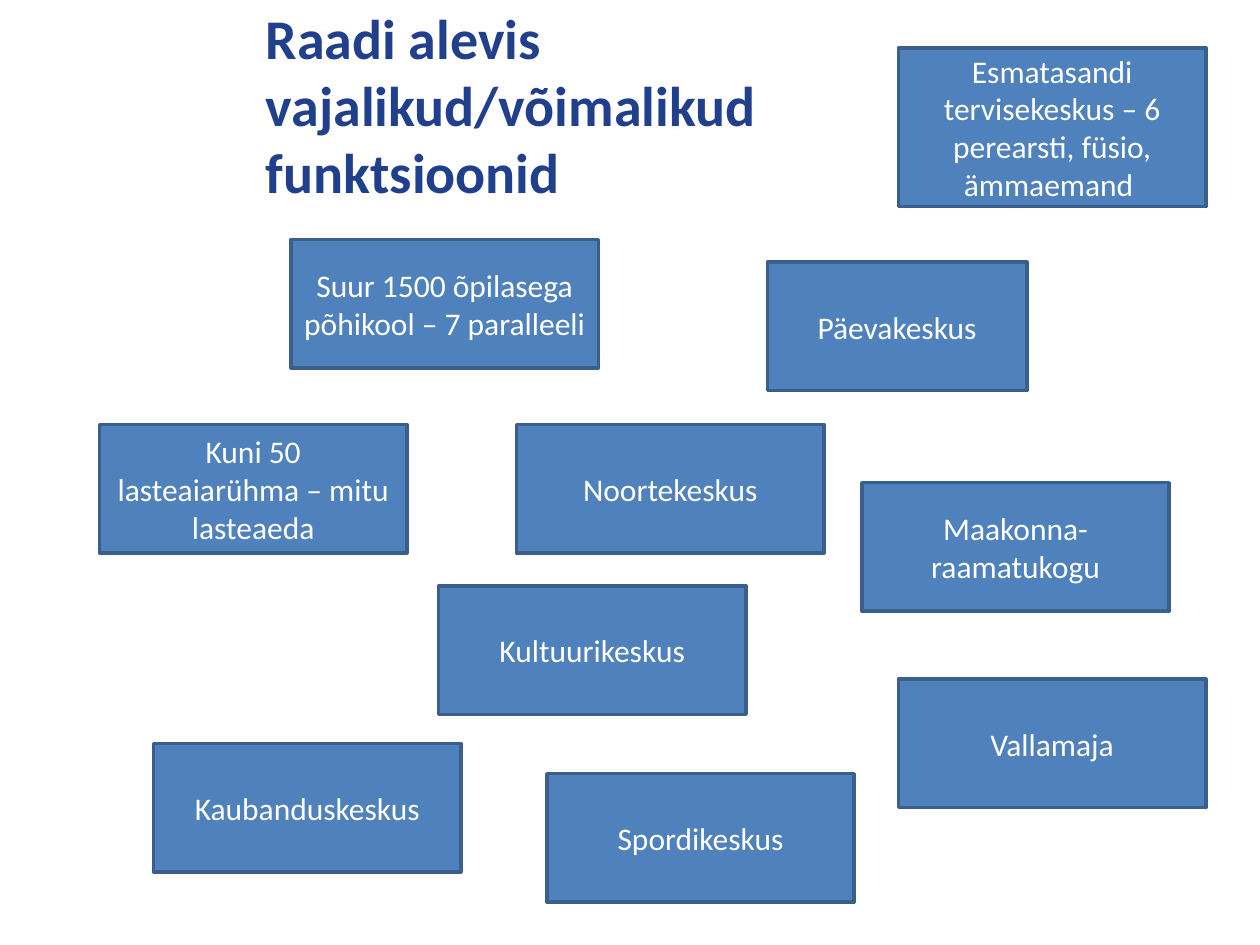
from pptx import Presentation
from pptx.dml.color import RGBColor
from pptx.enum.shapes import MSO_SHAPE as Shape
from pptx.enum.text import MSO_ANCHOR as Anchor, MSO_AUTO_SIZE as AutoSize, PP_ALIGN as Align
from pptx.util import Pt

BOX_WIDTH = 175.7
BOX_HEIGHT = 73.4
RIGHT_COLUMN = 513.4
MIDDLE_ROW = 242.6

FACILITIES = [
    ("Esmatasandi tervisekeskus – 6 perearsti, füsio, ämmaemand ", RIGHT_COLUMN, 27.4, BOX_WIDTH, 90.7),
    ("Suur 1500 õpilasega põhikool – 7 paralleeli", 166.3, 136.8),
    ("Kuni 50 lasteaiarühma – mitu lasteaeda", 56.9, MIDDLE_ROW),
    ("Kultuurikeskus", 250.6, 334.8),
    ("Noortekeskus", 295.2, MIDDLE_ROW),
    ("Päevakeskus", 438.5, 149.8, 148.3),
    ("Spordikeskus", 312.5, 442.1),
    ("Kaubanduskeskus", 87.8, 424.8),
    ("Vallamaja", RIGHT_COLUMN, 388.1),
    ("Maakonna-raamatukogu", 492.5, 275.8),
]


def color(value):
    return RGBColor.from_string(value)


class SlideBuilder:
    font_name = "Calibri"
    title_color = "203F8C"
    fill_color = "4F81BD"
    line_color = "3A5F8C"
    text_color = "FFFFFF"

    def __init__(self, slide):
        self.slide = slide

    def add_text(self, shape, text, size, text_color, alignment, bold=False):
        frame = shape.text_frame
        frame.word_wrap = True
        frame.auto_size = AutoSize.NONE
        frame.vertical_anchor = Anchor.MIDDLE
        paragraph = frame.paragraphs[0]
        paragraph.alignment = alignment
        run = paragraph.add_run()
        run.text = text
        run.font.name = self.font_name
        run.font.size = Pt(size)
        run.font.bold = bold
        run.font.color.rgb = color(text_color)

    def add_title(self, text, left, top, width, height):
        shape = self.slide.shapes.title
        shape.left, shape.top = Pt(left), Pt(top)
        shape.width, shape.height = Pt(width), Pt(height)
        self.add_text(shape, text, 32, self.title_color, Align.LEFT, bold=True)

    def add_box(self, text, left, top, width=BOX_WIDTH, height=BOX_HEIGHT):
        shape = self.slide.shapes.add_shape(
            Shape.RECTANGLE, Pt(left), Pt(top), Pt(width), Pt(height)
        )
        shape.shadow.inherit = False
        shape.fill.solid()
        shape.fill.fore_color.rgb = color(self.fill_color)
        shape.line.color.rgb = color(self.line_color)
        shape.line.width = Pt(2)
        self.add_text(shape, text, 18, self.text_color, Align.CENTER)


def main():
    presentation = Presentation()
    presentation.slide_width = Pt(720)
    presentation.slide_height = Pt(540)
    slide = presentation.slides.add_slide(presentation.slide_layouts[5])
    builder = SlideBuilder(slide)
    builder.add_title("Raadi alevis vajalikud/võimalikud funktsioonid", 144.7, 25.9, 334.8, 67)
    for facility in FACILITIES:
        builder.add_box(*facility)
    presentation.save("out.pptx")


if __name__ == "__main__":
    main()
